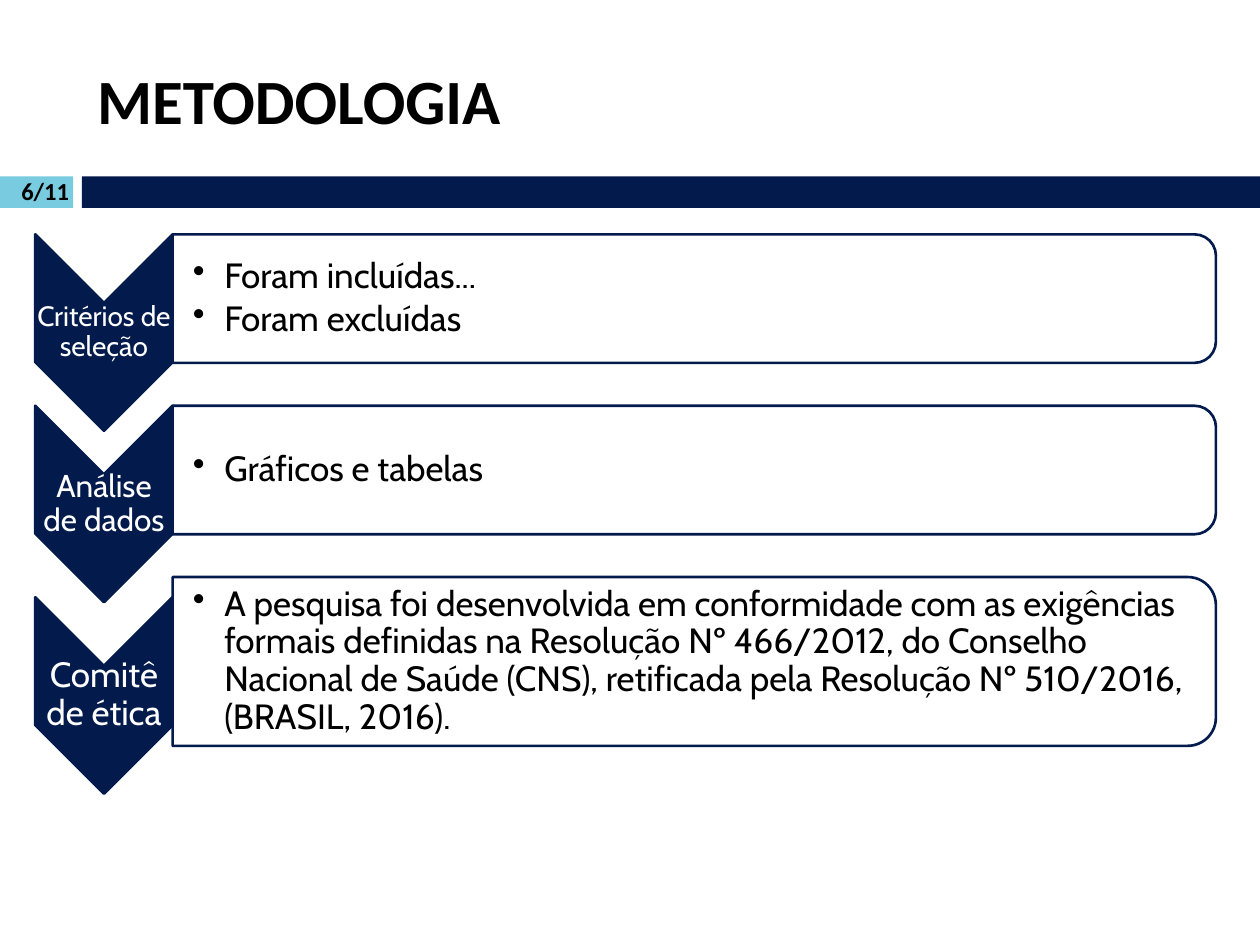
from dataclasses import dataclass

from lxml.etree import SubElement
from pptx import Presentation
from pptx.dml.color import RGBColor
from pptx.enum.shapes import MSO_SHAPE as Preset
from pptx.enum.text import MSO_ANCHOR as Anchor, PP_ALIGN as Align
from pptx.oxml.ns import qn
from pptx.util import Inches, Pt


@dataclass(frozen=True)
class Theme:
    navy = RGBColor.from_string("031A4D")
    sky = RGBColor.from_string("79CBDF")
    white = RGBColor.from_string("FFFFFF")
    black = RGBColor.from_string("000000")
    heading_font = "Calibri"
    body_font = "Cabin"
    title_size = 36
    number_size = 14
    body_size = 20
    outline = 1.5


theme = Theme()
deck = Presentation()
deck.slide_width, deck.slide_height = Inches(10), Inches(7.5)
page = deck.slides.add_slide(deck.slide_layouts[5])

# The grid has 100 columns and 75 rows
column = deck.slide_width / 100
row = deck.slide_height / 75


def add_block(preset, left, top, width, height, fill, line=None, turned=False):
    """Add a shape over the given cells; a turned one is rotated by 90 degrees."""
    if turned:
        left, top = left + (width - height) / 2, top + (height - width) / 2
        width, height = height, width
    block = page.shapes.add_shape(preset, int(left * column), int(top * row),
                                  int(width * column), int(height * row))
    block.rotation = 90 if turned else 0
    block.shadow.inherit = False
    block.fill.solid()
    block.fill.fore_color.rgb = fill
    if line is None:
        block.line.fill.background()
    else:
        block.line.color.rgb = line
        block.line.width = Pt(theme.outline)


def add_text(cells, lines, font, size, color, align, inset, bold=False,
             spacing=1.0, after=0):
    """Add a middle-anchored text box; inset is (left, other sides) in inches."""
    left, top, width, height = cells
    box = page.shapes.add_textbox(int(left * column), int(top * row),
                                  int(width * column), int(height * row))
    frame = box.text_frame
    frame.word_wrap = True
    frame.vertical_anchor = Anchor.MIDDLE
    frame.margin_left = Inches(inset[0])
    frame.margin_top = frame.margin_right = frame.margin_bottom = Inches(inset[1])
    frame.text = "\n".join(lines)
    for para in frame.paragraphs:
        para.alignment = align
        para.line_spacing = spacing
        para.space_after = Pt(after * size)
        para.font.name, para.font.size = font, Pt(size)
        para.font.bold, para.font.color.rgb = bold, color
    return frame


# Header
header_top, header_height = 14, 2.5
add_block(Preset.RECTANGLE, 0, header_top, 5.8, header_height, theme.sky)
add_block(Preset.RECTANGLE, 6.5, header_top, 93.5, header_height, theme.navy)
add_text((0, 13.6, 6.7, 3), ["6/11"], theme.heading_font, theme.number_size,
         theme.black, Align.CENTER, (0.1, 0.05), bold=True)

title = page.shapes.title
title.left, title.top = int(6.7 * column), int(2.5 * row)
title.width, title.height = int(93.3 * column), int(10.8 * row)
title.text_frame.text = "METODOLOGIA"
title.text_frame.vertical_anchor = Anchor.MIDDLE
heading = title.text_frame.paragraphs[0]
heading.alignment = Align.LEFT
heading.font.name, heading.font.size = theme.heading_font, Pt(theme.title_size)
heading.font.bold, heading.font.color.rgb = True, theme.black

# Steps: label, label size, panel height, alignment, bullets
steps = [
    ("Critérios de seleção", 16, 10.2, Align.LEFT,
     ["Foram incluídas...", "Foram excluídas"]),
    ("Análise de dados", 18, 10.2, Align.JUSTIFY, ["Gráficos e tabelas"]),
    ("Comitê de ética", 20, 13.4, Align.LEFT,
     ["A pesquisa foi desenvolvida em conformidade com as exigências formais "
      "definidas na Resolução Nº 466/2012, do Conselho Nacional de Saúde (CNS), "
      "retificada pela Resolução Nº 510/2016, (BRASIL, 2016)."]),
]
chevron_left, chevron_width, chevron_height = 2.8, 10.9, 15.6
chevron_body = 10.2
panel_left, panel_width = 13.7, 82.8
panel_top, gap = 18.6, 3.4

for label, label_size, panel_height, align, bullets in steps:
    chevron_top = panel_top + (panel_height - chevron_body) / 2
    add_block(Preset.CHEVRON, chevron_left, chevron_top, chevron_width,
              chevron_height, theme.navy, theme.navy, turned=True)
    add_text((chevron_left, chevron_top + chevron_width / 2, chevron_width, 4.7),
             [label], theme.body_font, label_size, theme.white, Align.CENTER,
             (0.01, 0.01), spacing=0.9, after=0.35)

    add_block(Preset.ROUND_2_SAME_RECTANGLE, panel_left, panel_top, panel_width,
              panel_height, theme.white, theme.navy, turned=True)
    frame = add_text((panel_left, panel_top + 0.5, panel_width - 0.6, panel_height - 1),
                     bullets, theme.body_font, theme.body_size, theme.black, align,
                     (0.16, 0.01), spacing=0.9, after=0.15)
    for para in frame.paragraphs:
        properties = para._p.get_or_add_pPr()
        properties.set("marL", str(Inches(0.25)))
        properties.set("indent", str(-Inches(0.25)))
        bullet = SubElement(properties, qn("a:buChar"), char="•")
        properties.find(qn("a:defRPr")).addprevious(bullet)
    panel_top += panel_height + gap

deck.save("out.pptx")
